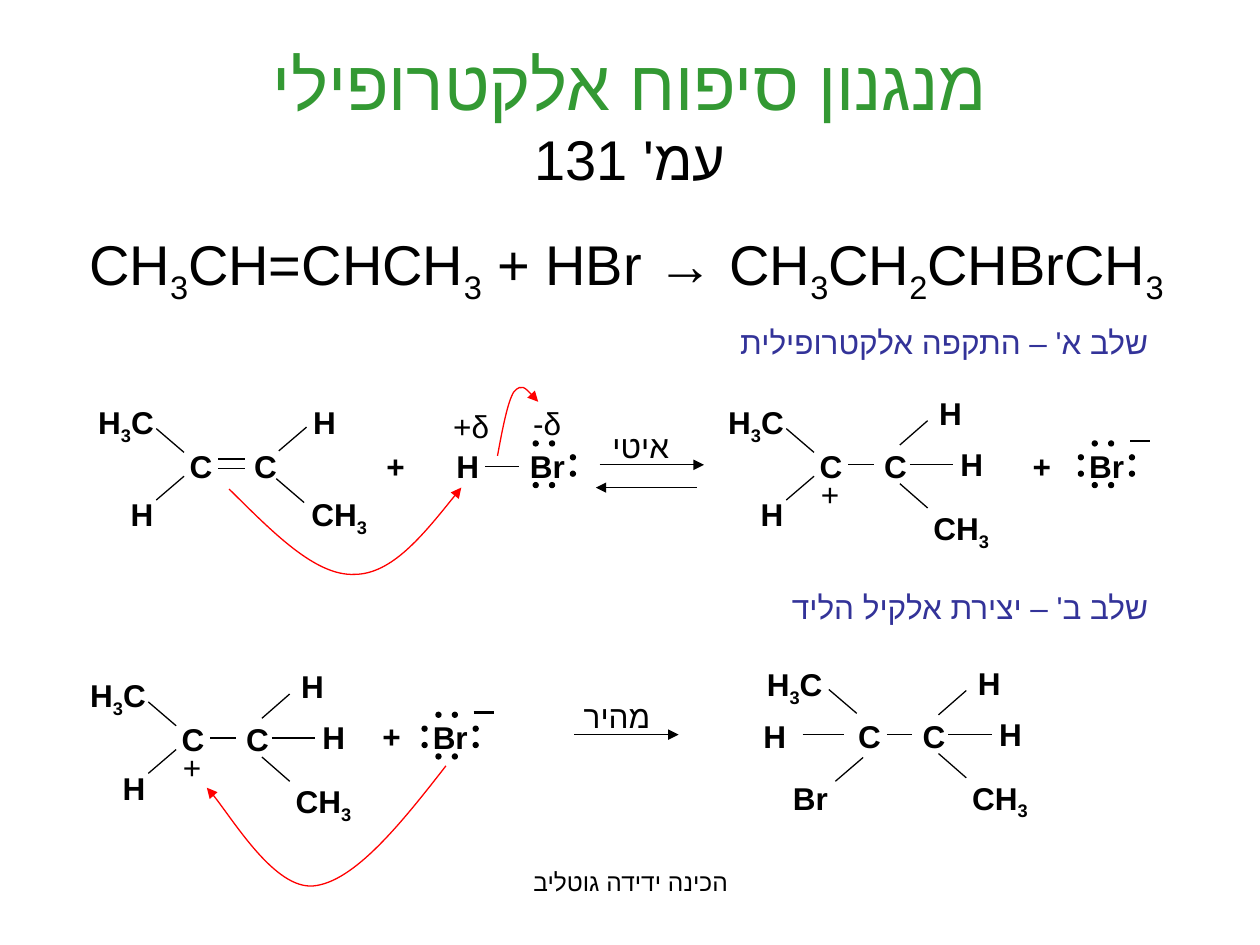
from dataclasses import dataclass
from itertools import groupby

from lxml import etree
from pptx import Presentation
from pptx import util as u
from pptx.dml.color import RGBColor
from pptx.enum import shapes, text
from pptx.oxml.ns import qn


@dataclass(frozen=True)
class Theme:
    font: str = "Arial"
    ink: RGBColor = RGBColor(0x00, 0x00, 0x00)
    title: RGBColor = RGBColor(0x33, 0x99, 0x33)
    step: RGBColor = RGBColor(0x33, 0x33, 0x99)
    electrons: RGBColor = RGBColor(0xFF, 0x00, 0x00)
    title_size: int = 40
    large: int = 32
    body: int = 18
    footer: int = 14
    thin: float = 0.75
    thick: float = 1.5


THEME = Theme()
RIGHT, CENTER = text.PP_ALIGN.RIGHT, text.PP_ALIGN.CENTER
LETTER, GROUP_NAME, BROMINE, SIGN = 1.02, 1.9, 1.45, 1.04  # label widths, cm


@dataclass(frozen=True)
class Region:
    """A drawing surface and the point (cm) from which its parts are placed."""
    canvas: object
    left: float
    top: float

    def at(self, x, y):
        return u.Cm(self.left + x), u.Cm(self.top + y)

    def inside(self, x, y):
        return Region(self.canvas, self.left + x, self.top + y)


def style_paragraph(paragraph, size, color, align, bold=False):
    paragraph.alignment = align
    paragraph._p.get_or_add_pPr().set("rtl", "1")
    font = paragraph.font
    font.size, font.bold, font.name = u.Pt(size), bold, THEME.font
    font.color.rgb = color
    complex_script = etree.SubElement(font._element, qn("a:cs"))
    complex_script.set("typeface", THEME.font)


def add_label(region, words, x, y, width, height=LETTER, size=THEME.body,
              color=THEME.ink, align=RIGHT, bold=False):
    """Right-to-left text box in which digits become subscripts."""
    box = region.canvas.add_textbox(*region.at(x, y), u.Cm(width), u.Cm(height))
    frame = box.text_frame
    frame.word_wrap = True
    frame.auto_size = text.MSO_AUTO_SIZE.SHAPE_TO_FIT_TEXT
    paragraph = frame.paragraphs[0]
    style_paragraph(paragraph, size, color, align, bold)
    for is_digit, letters in groupby(words, str.isdigit):
        run = paragraph.add_run()
        run.text = "".join(letters)
        if is_digit:
            run.font._element.set("baseline", "-25000")


def add_atoms(region, atoms):
    for words, x, y, width in atoms:
        add_label(region, words, x, y, width, bold=True)


def add_arrowhead(line):
    etree.SubElement(line._get_or_add_ln(), qn("a:tailEnd")).set("type", "triangle")


def add_line(region, x1, y1, x2, y2, width=THEME.thin, arrow=False):
    connector = region.canvas.add_connector(
        shapes.MSO_CONNECTOR.STRAIGHT, *region.at(x1, y1), *region.at(x2, y2))
    connector.line.color.rgb = THEME.ink
    connector.line.width = u.Pt(width)
    etree.SubElement(connector._element.spPr, qn("a:effectLst"))
    if arrow:
        add_arrowhead(connector.line)


def add_bonds(region, bonds):
    for bond in bonds:
        add_line(region, *bond)


def add_electron_arrow(region, points):
    """Red curve: a start, then two controls and an end for each segment."""
    start, *others = [region.at(*point) for point in points]
    builder = region.canvas.build_freeform(*start)
    builder.add_line_segments(others, close=False)
    curve = builder.convert_to_shape()
    segments = list(curve._element.iter(qn("a:lnTo")))
    for first in range(0, len(segments), 3):
        bezier = etree.Element(qn("a:cubicBezTo"))
        segments[first].addprevious(bezier)
        for segment in segments[first:first + 3]:
            bezier.append(segment[0])
            segment.getparent().remove(segment)
    curve.shadow.inherit = False
    curve.fill.background()
    curve.line.color.rgb = THEME.electrons
    curve.line.width = u.Pt(THEME.thin)
    add_arrowhead(curve.line)


def draw_double_bond_end(region):
    add_atoms(region, [("C", 0, 0, LETTER), ("H3C", -2.06, -0.89, GROUP_NAME),
                       ("H", -1.19, 0.97, LETTER)])
    add_bonds(region, [(0.2, 0.23, -0.36, -0.25), (-0.36, 1.19, 0.2, 0.71)])


def draw_ethyl_end(region):
    """Single bond to a carbon that carries two hydrogens and a methyl."""
    add_atoms(region, [("C", 1.3, 0, LETTER), ("H", 2.41, -1.07, LETTER),
                       ("H", 2.84, -0.05, LETTER), ("CH3", 2.08, 1.24, GROUP_NAME)])
    add_bonds(region, [(0.89, 0.48, 1.4, 0.48), (1.93, 0.08, 2.49, -0.41),
                       (2.13, 0.48, 3, 0.48), (2.49, 1.35, 1.93, 0.86)])


def draw_alkene(region):
    draw_double_bond_end(region)
    add_atoms(region, [("C", 1.3, 0, LETTER), ("H", 2.49, -0.89, LETTER),
                       ("CH3", 2.24, 0.97, GROUP_NAME)])
    add_bonds(region, [(0.89, 0.36, 1.42, 0.36), (0.89, 0.56, 1.42, 0.56),
                       (2.62, 1.24, 2.06, 0.76), (2.11, 0.2, 2.67, -0.28)])


def draw_cation(region):
    draw_double_bond_end(region)
    draw_ethyl_end(region)
    add_label(region, "+", -0.08, 0.56, SIGN)


def draw_alkyl_bromide(region):
    add_atoms(region, [("C", 0, 0, LETTER), ("H3C", -2.06, -1.04, GROUP_NAME),
                       ("H", -1.91, 0, LETTER), ("Br", -1.42, 1.24, 1.37)])
    add_bonds(region, [(0.28, 0.05, -0.28, -0.43), (-0.81, 0.48, 0.03, 0.48),
                       (-0.15, 1.42, 0.41, 0.94)])
    draw_ethyl_end(region)


def draw_bromine(region, side_pairs):
    """Br with lone pairs above, below and at the given x positions."""
    add_atoms(region, [("Br", 0, 0, BROMINE)])
    dots = [(x, y) for y in (0, 0.84) for x in (0.56, 0.89)]
    dots += [(x, y) for x in side_pairs for y in (0.28, 0.61)]
    for x, y in dots:
        dot = region.canvas.add_shape(shapes.MSO_SHAPE.OVAL, *region.at(x, y),
                                      u.Cm(0.1), u.Cm(0.1))
        dot.shadow.inherit = False
        dot.fill.solid()
        dot.fill.fore_color.rgb = dot.line.color.rgb = THEME.ink
        dot.line.width = u.Pt(THEME.thin)


def draw_bromide(region):
    draw_bromine(region, (0.28, 1.31))
    add_line(region, 1.32, 0, 1.73, 0, THEME.thick)


def draw_hydrogen_bromide(region):
    add_atoms(region, [("H", 0, 0, LETTER)])
    draw_bromine(region.inside(1.3, 0), (1.31,))
    add_line(region, 0.89, 0.51, 1.57, 0.51)
    add_label(region, "δ+", -0.08, -0.81, 1.3)
    add_label(region, "δ-", 1.37, -0.86, 1.3)


def draw_reaction_arrow(region, label, label_x):
    add_line(region, 0, 0, 2.1, 0, arrow=True)
    add_label(region, label, label_x, -0.89, 1.85)


def draw_attack_step(region):
    draw_alkene(region.inside(3.51, 0))
    draw_hydrogen_bromide(region.inside(8.89, 0))
    draw_cation(region.inside(16.21, 0))
    draw_bromide(region.inside(21.46, 0))
    add_atoms(region, [("+", 7.37, 0, SIGN), ("+", 20.4, 0, SIGN)])
    draw_reaction_arrow(region.inside(12.09, 0.48), "איטי", -0.2)
    add_line(region, 14.05, 0.94, 12.01, 0.94, arrow=True)
    add_electron_arrow(region, [(4.62, 0.97), (5.49, 1.83), (6.35, 2.72), (7.14, 2.69),
                                (7.9, 2.69), (8.61, 1.8), (9.3, 0.94)])
    add_electron_arrow(region, [(10.03, 0.3), (10.13, -0.25), (10.24, -0.81), (10.36, -0.99),
                                (10.52, -1.17), (10.67, -0.99), (10.85, -0.79)])


def draw_halide_step(region):
    draw_cation(region.inside(3.35, 0.07))
    draw_bromide(region.inside(8.23, 0.03))
    draw_alkyl_bromide(region.inside(16.99, 0))
    add_atoms(region, [("+", 7.29, 0, SIGN)])
    draw_reaction_arrow(region.inside(11.58, 0.48), "מהיר", -0.07)
    add_electron_arrow(region, [(8.99, 1.11), (8.08, 2.28), (7.14, 3.45), (6.32, 3.53),
                                (5.54, 3.6), (4.52, 1.9), (4.17, 1.55)])


def fill_title(title):
    title.left, title.top, title.width, title.height = map(u.Cm, (1.27, 0.76, 22.86, 3.18))
    title.text_frame.vertical_anchor = text.MSO_ANCHOR.MIDDLE
    paragraph = title.text_frame.paragraphs[0]
    style_paragraph(paragraph, THEME.title_size, THEME.title, CENTER)
    paragraph.add_run().text = "מנגנון סיפוח אלקטרופילי"
    paragraph.add_line_break()
    page = paragraph.add_run()
    page.text = "עמ' 131"
    page.font.size, page.font.color.rgb = u.Pt(THEME.large), THEME.ink


def main():
    presentation = Presentation()
    presentation.slide_width, presentation.slide_height = u.Cm(25.4), u.Cm(19.05)
    slide = presentation.slides.add_slide(presentation.slide_layouts[5])
    fill_title(slide.shapes.title)
    page = Region(slide.shapes, 0, 0)
    add_label(page, "הכינה ידידה גוטליב", 8.69, 17.35, 8.05, 1.32, THEME.footer, align=CENTER)
    add_label(page, "CH3CH=CHCH3 + HBr → CH3CH2CHBrCH3", 1.4, 4.5, 22.45, 1.6,
              THEME.large, align=CENTER)
    steps = [("שלב א' – התקפה אלקטרופילית", 6.38, 8.89, draw_attack_step),
             ("שלב ב' – יצירת אלקיל הליד", 11.73, 14.33, draw_halide_step)]
    for heading, heading_top, top, draw in steps:
        add_label(page, heading, 14.48, heading_top, 8.92, color=THEME.step)
        draw(Region(slide.shapes.add_group_shape().shapes, 0, top))
    presentation.save("out.pptx")


if __name__ == "__main__":
    main()
